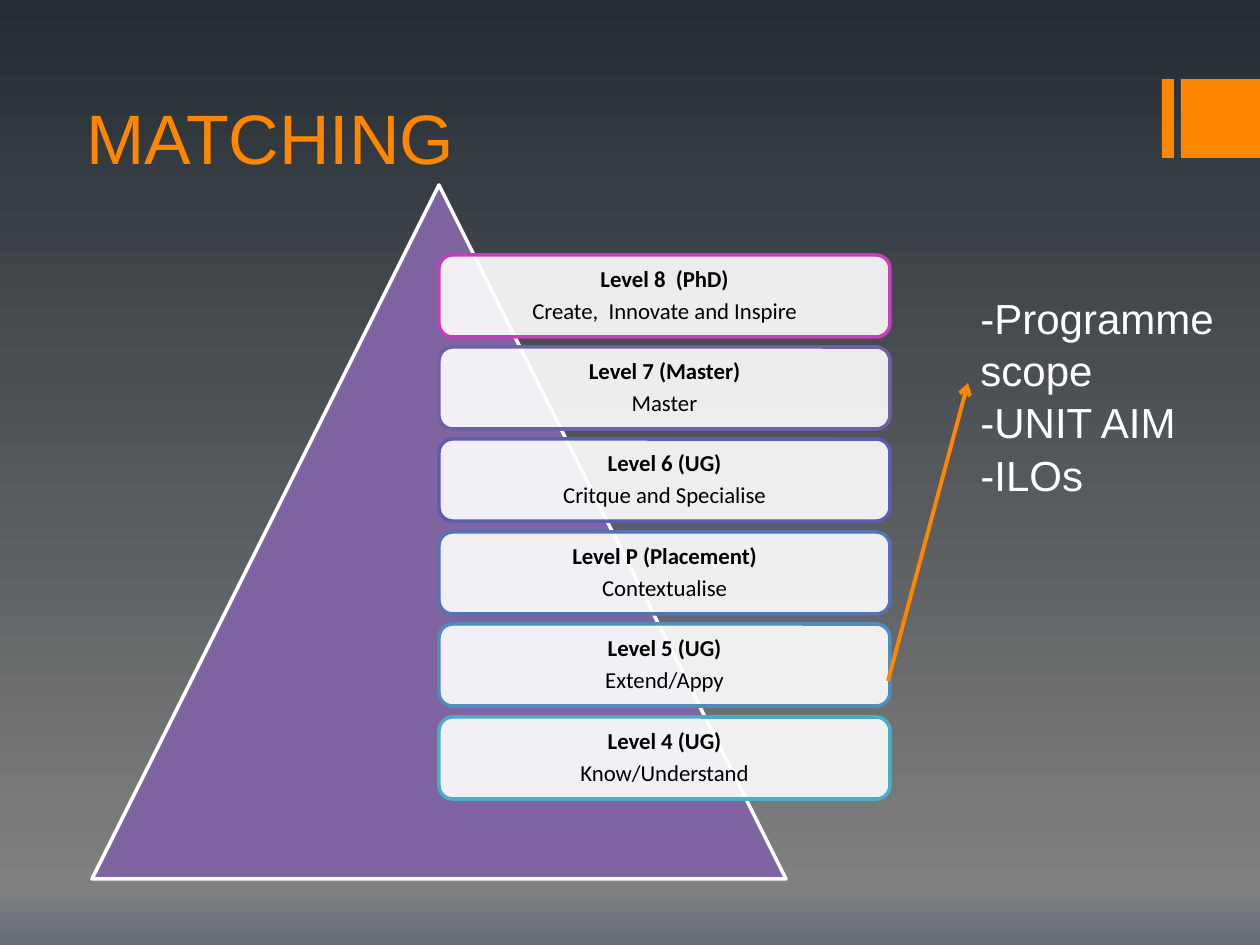
from copy import deepcopy
from dataclasses import dataclass

from lxml import etree
from pptx import Presentation
from pptx import util as u
from pptx.dml.color import RGBColor
from pptx.enum import shapes, text
from pptx.oxml.ns import qn

PX = 914400 / 126


@dataclass(frozen=True)
class Theme:
    accent: str = "FF8600"
    light: str = "FFFFFF"
    dark: str = "000000"
    pyramid: str = "8064A2"
    background: tuple = ((0, "242C33"), (0.94, "808080"), (1, "636D76"))
    font: str = "Arial"
    level_font: str = "Calibri"
    title_size: int = 40
    list_size: int = 24
    level_size: int = 13
    outline: int = 2


@dataclass(frozen=True)
class Box:
    left: int
    top: int
    width: int
    height: int

    def emu(self) -> list[u.Emu]:
        return [px(v) for v in (self.left, self.top, self.width, self.height)]


@dataclass(frozen=True)
class Level:
    name: str
    verb: str
    color: str


THEME = Theme()
LEVELS = (
    Level("Level 8  (PhD)", "Create,  Innovate and Inspire", "C83EB8"),
    Level("Level 7 (Master)", "Master", "6E5FA9"),
    Level("Level 6 (UG)", "Critque and Specialise", "5A5EB1"),
    Level("Level P (Placement)", "Contextualise", "5572B8"),
    Level("Level 5 (UG)", "Extend/Appy", "508CBF"),
    Level("Level 4 (UG)", "Know/Understand", "4BACC6"),
)
MARKERS = (Box(1162, 79, 12, 79), Box(1181, 79, 79, 79))
TITLE = Box(74, 26, 1008, 159)
PYRAMID = Box(92, 185, 694, 694)
FIRST_LEVEL = Box(439, 255, 451, 82)
LEVELS_SPAN = 462  # from the top of the first level to the top of the last
SCOPE = Box(968, 284, 268, 267)


def px(value: float) -> u.Emu:
    return u.Emu(round(value * PX))


def rgb(color: str) -> RGBColor:
    return RGBColor.from_string(color)


def style_text(p, font: str, size: int, color: str, bold: bool = False) -> None:
    for r in p.runs:
        r.font.name, r.font.size, r.font.bold = font, u.Pt(size), bold
        r.font.color.rgb = rgb(color)


def paint_background(s) -> None:
    fill = s.background.fill
    fill.gradient()
    fill.gradient_angle = 270
    first = next(s.background._cSld.iter(qn("a:gs")))
    first.addnext(deepcopy(first))
    for stop, (position, color) in zip(fill.gradient_stops, THEME.background):
        stop.position = position
        stop.color.rgb = rgb(color)


def add_shape(s, kind, box: Box, fill: str, line: str | None = None):
    sp = s.shapes.add_shape(kind, *box.emu())
    sp.shadow.inherit = False
    sp.fill.solid()
    sp.fill.fore_color.rgb = rgb(fill)
    if line:
        sp.line.color.rgb = rgb(line)
        sp.line.width = u.Pt(THEME.outline)
    else:
        sp.line.fill.background()
    return sp


def add_level(s, level: Level, box: Box) -> None:
    sp = add_shape(s, shapes.MSO_SHAPE.ROUNDED_RECTANGLE, box, THEME.light, level.color)
    color = sp._element.spPr.find(qn("a:solidFill"))[0]
    etree.SubElement(color, qn("a:alpha"), val="90000")
    tf = sp.text_frame
    tf.word_wrap = True
    tf.vertical_anchor = text.MSO_ANCHOR.MIDDLE
    tf.margin_left = tf.margin_right = tf.margin_top = tf.margin_bottom = px(6)
    tf.text = f"{level.name}\n{level.verb}"
    for p, bold in zip(tf.paragraphs, (True, False)):
        p.alignment = text.PP_ALIGN.CENTER
        p.line_spacing = 0.9
        p.space_after = u.Pt(0.35 * THEME.level_size)
        style_text(p, THEME.level_font, THEME.level_size, THEME.dark, bold)


def add_arrow(s, start: tuple[int, int], end: tuple[int, int]) -> None:
    arrow = s.shapes.add_connector(
        shapes.MSO_CONNECTOR.STRAIGHT, *map(px, start + end))
    arrow.line.color.rgb = rgb(THEME.accent)
    arrow.line.width = u.Pt(2.25)
    etree.SubElement(arrow.line._get_or_add_ln(), qn("a:tailEnd"), type="arrow")
    etree.SubElement(arrow._element.spPr, qn("a:effectLst"))


def add_title(s, words: str) -> None:
    title = s.shapes.title
    title.left, title.top, title.width, title.height = TITLE.emu()
    tf = title.text_frame
    tf.text = words
    tf.vertical_anchor = text.MSO_ANCHOR.BOTTOM
    p = tf.paragraphs[0]
    p.alignment = text.PP_ALIGN.LEFT
    style_text(p, THEME.font, THEME.title_size, THEME.accent)


def add_scope(s, words: str) -> None:
    tf = s.shapes.add_textbox(*SCOPE.emu()).text_frame
    tf.word_wrap = True
    tf.text = words
    for p in tf.paragraphs:
        p.line_spacing = 1.04
        style_text(p, THEME.font, THEME.list_size, THEME.light)


def main() -> None:
    prs = Presentation()
    prs.slide_width, prs.slide_height = px(1260), px(945)
    s = prs.slides.add_slide(prs.slide_layouts.get_by_name("Title Only"))
    paint_background(s)
    for box in MARKERS:
        add_shape(s, shapes.MSO_SHAPE.RECTANGLE, box, THEME.accent)
    add_title(s, "MATCHING")
    add_shape(s, shapes.MSO_SHAPE.ISOSCELES_TRIANGLE, PYRAMID, THEME.pyramid, THEME.light)
    for i, level in enumerate(LEVELS):
        top = FIRST_LEVEL.top + i * LEVELS_SPAN // (len(LEVELS) - 1)
        add_level(s, level, Box(FIRST_LEVEL.left, top, FIRST_LEVEL.width, FIRST_LEVEL.height))
    add_arrow(s, (888, 681), (968, 383))
    add_scope(s, "-Programme\vscope\n-UNIT AIM\n-ILOs")
    prs.save("out.pptx")


if __name__ == "__main__":
    main()
